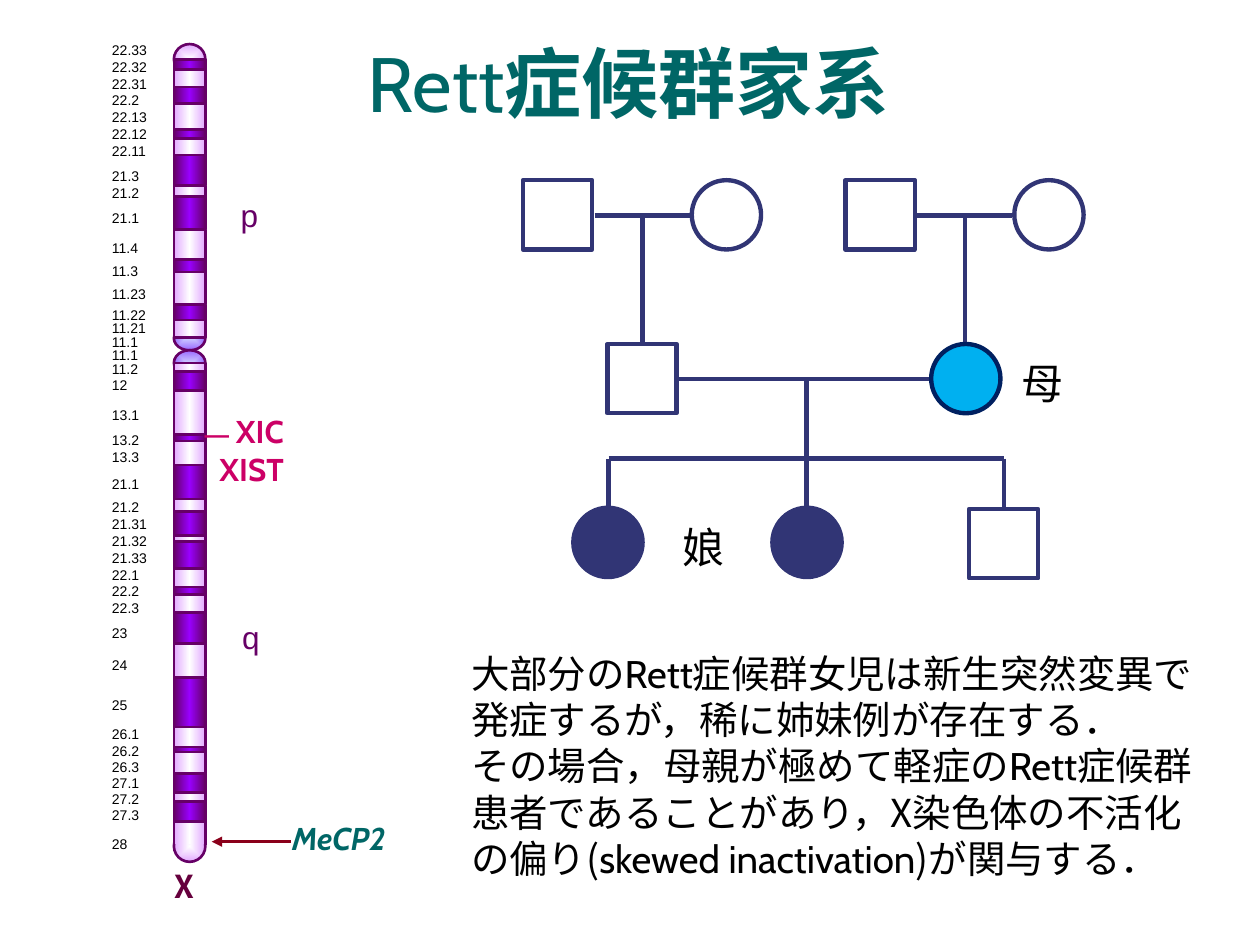
import pptx
import pptx.util
import pptx.dml.color
import pptx.enum.shapes
import pptx.enum.text
import lxml.etree

Inches, Pt = pptx.util.Inches, pptx.util.Pt
KIND = pptx.enum.shapes.MSO_SHAPE
ALIGN = pptx.enum.text.PP_ALIGN
colour = pptx.dml.color.RGBColor.from_string
DRAWING = "http://schemas.openxmlformats.org/drawingml/2006/main"
CJK, LATIN, SANS = "Noto Sans CJK JP", "Cabin", "Arial"
NAVY, PURPLE, TEAL, PINK = "313575", "660066", "006666", "CC0066"


def write(para, text, font=CJK, size=18, fill="000000", bold=False, italic=False):
    span = para.add_run()
    span.text = text
    span.font.name, span.font.size = font, Pt(size)
    span.font.bold, span.font.italic = bold, italic
    span.font.color.rgb = colour(fill)
    east = lxml.etree.SubElement(span.font._element, f"{{{DRAWING}}}ea")
    east.set("typeface", font)


def draw(shapes, kind, left, top, width, height, fill=None, line=NAVY, weight=2.5):
    """Draw a preset shape, or a straight line when kind is None."""
    if kind is None:
        item = shapes.add_connector(
            pptx.enum.shapes.MSO_CONNECTOR.STRAIGHT, Inches(left), Inches(top),
            Inches(left + width), Inches(top + height))
        lxml.etree.SubElement(item._element.spPr, f"{{{DRAWING}}}effectLst")
    else:
        item = shapes.add_shape(kind, Inches(left), Inches(top), Inches(width), Inches(height))
        item.shadow.inherit = False
        item.fill.background()
        if isinstance(fill, str):
            item.fill.solid()
            item.fill.fore_color.rgb = colour(fill)
        elif fill:  # gradient: evenly spaced stops, radial on ellipses
            empty = item._element.spPr.find(f"{{{DRAWING}}}noFill")
            stops = "".join(
                f'<a:gs pos="{100000 * i // (len(fill) - 1)}"><a:srgbClr val="{stop}"/></a:gs>'
                for i, stop in enumerate(fill))
            radial = ('<a:path path="shape"><a:fillToRect l="50000" t="50000" r="50000" b="50000"/>'
                      '</a:path>')
            course = radial if kind == KIND.OVAL else '<a:lin ang="0" scaled="1"/>'
            empty.getparent().replace(empty, lxml.etree.fromstring(
                f'<a:gradFill xmlns:a="{DRAWING}"><a:gsLst>{stops}</a:gsLst>{course}</a:gradFill>'))
    if line:
        item.line.color.rgb = colour(line)
        item.line.width = Pt(weight)
    else:
        item.line.fill.background()
    return item


deck = pptx.Presentation()
deck.slide_width, deck.slide_height = Inches(10), Inches(7.5)
page = deck.slides.add_slide(deck.slide_layouts[5])

# Title
title = page.shapes.title
title.left, title.top, title.width, title.height = map(Inches, (0.74, 0.1, 8.5, 1.1))
title.text_frame.vertical_anchor = pptx.enum.text.MSO_ANCHOR.MIDDLE
para = title.text_frame.paragraphs[0]
para.alignment = ALIGN.CENTER
write(para, "Rett", font=LATIN, size=44, fill=TEAL)
write(para, "症候群家系", size=44, fill=TEAL, bold=True)

# Chromosome: rounded ends and centromere, then alternating bands
chromosome = page.shapes.add_group_shape().shapes
LEFT, WIDTH = 1.38, 0.25
LIGHT, DARK = ("E2A9FF", "FFFFFF", "E2A9FF"), (PURPLE, "9900FF", PURPLE)
TIP, CENTROMERE = ("FFFFFF", "E2A9FF"), ("CCCCFF", "9966FF")
for top, height, fill in [(6.59, 0.25, TIP), (2.59, 0.19, CENTROMERE),
                          (0.35, 0.24, TIP), (2.78, 0.2, CENTROMERE)]:
    draw(chromosome, KIND.OVAL, LEFT, top, WIDTH, height, fill, PURPLE, 1.5)
draw(chromosome, KIND.RECTANGLE, LEFT, 6.4, WIDTH, 0.3, LIGHT, None)
for side in (LEFT, LEFT + WIDTH):
    draw(chromosome, None, side, 6.41, 0, 0.3, line=PURPLE, weight=1.5)

short_arm = [0.47, 0.55, 0.69, 0.82, 1.03, 1.1, 1.23, 1.47, 1.56, 1.82, 2.06, 2.16,
             2.42, 2.54, 2.68]
long_arm = [2.88, 2.95, 3.1, 3.45, 3.5, 3.69, 3.96, 4.06, 4.25, 4.3, 4.51, 4.66, 4.72,
            4.86, 5.11, 5.38, 5.77, 5.93, 5.97, 6.14, 6.29, 6.36, 6.52]
for edges, fills in [(short_arm, (DARK, LIGHT)), (long_arm, (LIGHT, DARK))]:
    for i, (top, bottom) in enumerate(zip(edges, edges[1:])):
        draw(chromosome, KIND.RECTANGLE, LEFT, top, WIDTH, bottom - top, fills[i % 2], PURPLE, 1.5)

# Band labels: a number before a label is the gap above it, in points
labels = """22.33 22.32 22.31 22.2 22.13 22.12 22.11 4:21.3 21.2 4:21.1 6:11.4 3:11.3 3:11.23
2:11.22 11.21 11.1 11.1 11.2 12 6:13.1 4:13.2 13.3 5:21.1 3:21.2 21.31 21.32 21.33 22.1
22.2 22.3 4:23 7:24 11:25 6:26.1 26.2 26.3 27.1 27.2 27.3 6:28""".split()
squeeze = {**dict.fromkeys(range(14, 18), 0.8), **dict.fromkeys(range(35, 39), 0.95)}
box = page.shapes.add_textbox(Inches(0.79), Inches(0.28), Inches(0.63), Inches(6.55))
box.text_frame.word_wrap = True
for i, label in enumerate(labels):
    para = box.text_frame.paragraphs[0] if i == 0 else box.text_frame.add_paragraph()
    gap, _, name = label.rpartition(":")
    para.space_before = Pt(1.2 * int(gap or 0))
    para.line_spacing = Pt(9.6 * squeeze.get(i, 1))
    write(para, name, font=SANS, size=8)

# Pedigree: family lines (left, top, width, height)
for place in [(4.72, 1.71, 0.76, 0), (7.27, 1.71, 0.76, 0), (5.1, 1.71, 0, 1.02),
              (7.66, 1.71, 0, 1.02), (5.39, 3.01, 1.98, 0), (6.4, 3.01, 0, 0.63),
              (4.83, 3.64, 1.57, 0), (6.4, 3.64, 1.57, 0),
              (4.83, 3.64, 0, 0.39), (6.4, 3.64, 0, 0.39), (7.97, 3.64, 0, 0.39)]:
    draw(page.shapes, None, *place)

# Pedigree: males are squares, females circles
for kind, left, top, fill, line in [
        (KIND.RECTANGLE, 4.15, 1.43, None, NAVY), (KIND.OVAL, 5.49, 1.43, None, NAVY),
        (KIND.RECTANGLE, 6.71, 1.43, None, NAVY), (KIND.OVAL, 8.05, 1.43, None, NAVY),
        (KIND.RECTANGLE, 4.82, 2.73, None, NAVY), (KIND.OVAL, 7.39, 2.73, "00B0F0", "002060"),
        (KIND.OVAL, 4.55, 4.03, NAVY, NAVY), (KIND.OVAL, 6.13, 4.03, NAVY, NAVY),
        (KIND.RECTANGLE, 7.69, 4.04, None, NAVY)]:
    draw(page.shapes, kind, left, top, 0.55, 0.55, fill, line)

# Arrow to the gene
arrow = draw(page.shapes, None, 2.31, 6.68, -0.63, 0, line="8A001A", weight=2)
lxml.etree.SubElement(arrow.line._get_or_add_ln(), f"{{{DRAWING}}}tailEnd").set("type", "triangle")

# Captions and explanation: place, alignment, format, paragraphs of (text, font)
pink = dict(fill=PINK, bold=True)
arm = dict(fill=PURPLE)
explanation = [
    [("大部分の", CJK), ("Rett", LATIN),
     ("症候群女児は新生突然変異で発症するが，稀に姉妹例が存在する．", CJK)],
    [("その場合，母親が極めて軽症の", CJK), ("Rett", LATIN),
     ("症候群患者であることがあり，X染色体の不活化の偏り(", CJK),
     ("skewed inactivation", LATIN), (")が関与する．", CJK)]]
for place, align, style, paragraphs in [
        ((1.24, 6.83, 0.51, 0.4), ALIGN.CENTER, dict(fill="66003D", bold=True), [[("X ", CJK)]]),
        ((1.46, 3.22, 0.89, 0.71), ALIGN.RIGHT, pink,
         [[("― ", SANS), ("XIC", LATIN)], [("XIST", LATIN)]]),
        ((1.76, 1.51, 0.51, 0.4), ALIGN.CENTER, arm, [[("p ", SANS)]]),
        ((1.77, 4.86, 0.51, 0.4), ALIGN.CENTER, arm, [[("q ", SANS)]]),
        ((2.22, 6.45, 0.99, 0.4), ALIGN.LEFT, dict(fill=TEAL, bold=True, italic=True),
         [[("MeCP2", LATIN)]]),
        ((3.64, 5.11, 6.04, 1.95), ALIGN.LEFT, dict(size=22), explanation),
        ((8.01, 2.79, 0.59, 0.5), ALIGN.LEFT, dict(size=24), [[("母", CJK)]]),
        ((5.32, 4.09, 0.59, 0.5), ALIGN.LEFT, dict(size=24), [[("娘", CJK)]])]:
    box = page.shapes.add_textbox(*map(Inches, place))
    box.text_frame.word_wrap = True
    for i, spans in enumerate(paragraphs):
        para = box.text_frame.paragraphs[0] if i == 0 else box.text_frame.add_paragraph()
        para.alignment = align
        para.line_spacing = Pt(1.2 * style.get("size", 18))
        for text, font in spans:
            write(para, text, **{**style, "font": font, "size": 14 if text == "― " else style.get("size", 18)})

deck.save("out.pptx")
